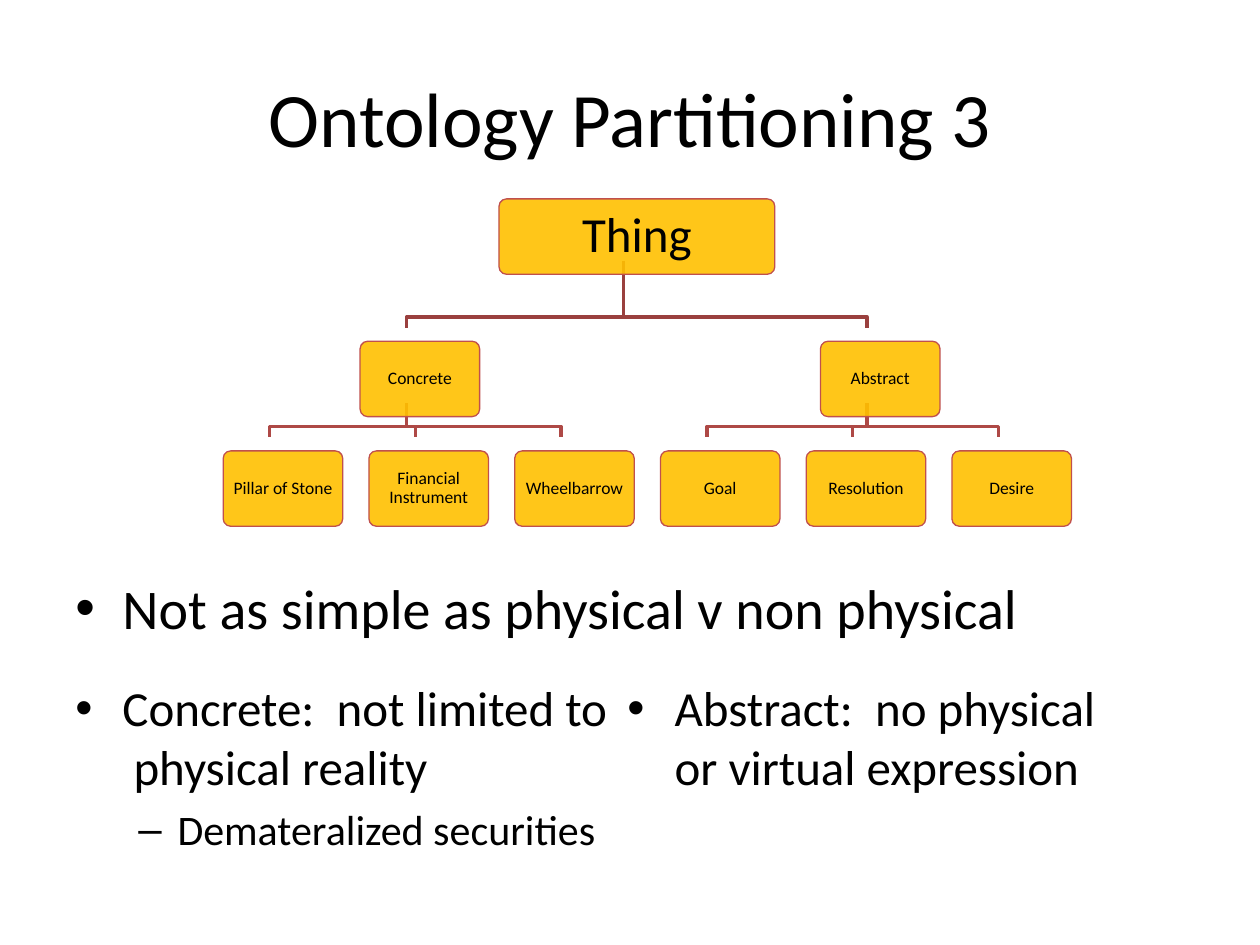
from collections import namedtuple

from lxml.etree import SubElement
from pptx import Presentation
from pptx.dml.color import RGBColor
from pptx.enum.shapes import MSO_SHAPE
from pptx.enum.text import MSO_ANCHOR, PP_ALIGN
from pptx.oxml.ns import qn
from pptx.util import Cm, Pt

Box = namedtuple("Box", "left top width height")
Node = namedtuple("Node", "label box size inset")

FONT = "Calibri"
BLACK = "000000"
AMBER = "FFC000"
RED = "C0504D"
CARD_WIDTH, CARD_HEIGHT = 2.41, 1.52
LINK_OFFSET = 0.27
LINK_BEND = 0.22
BRANCHES = [
    ("Concrete", 2.76, ["Pillar of Stone", "Financial Instrument", "Wheelbarrow"]),
    ("Abstract", 12.04, ["Goal", "Resolution", "Desire"]),
]
BULLETS = [("•", 0.95, 0.95), ("–", 2.06, 0.79)]


def color(value):
    return RGBColor.from_string(value)


def add_span(para, text, size):
    span = para.add_run()
    span.text = text
    span.font.name = FONT
    span.font.size = Pt(size)
    span.font.color.rgb = color(BLACK)


def place(shape, box):
    shape.left, shape.top, shape.width, shape.height = (Cm(value) for value in box)


def add_title(page, box, text):
    title = page.shapes.title
    place(title, box)
    title.text_frame.vertical_anchor = MSO_ANCHOR.MIDDLE
    para = title.text_frame.paragraphs[0]
    para.alignment = PP_ALIGN.CENTER
    add_span(para, text, 44)


def add_card(page, node):
    card = page.shapes.add_shape(
        MSO_SHAPE.ROUNDED_RECTANGLE, *(Cm(value) for value in node.box))
    card.adjustments[0] = 0.1
    card.shadow.inherit = False
    card.fill.solid()
    card.fill.fore_color.rgb = color(AMBER)
    tint = card.fill._xPr.find(qn("a:solidFill"))[0]
    SubElement(tint, qn("a:alpha"), val="90000")
    card.line.color.rgb = color(RED)
    card.line.width = Pt(0.75)
    frame = card.text_frame
    frame.word_wrap = True
    frame.vertical_anchor = MSO_ANCHOR.MIDDLE
    frame.margin_left = frame.margin_right = Cm(node.inset)
    frame.margin_top = frame.margin_bottom = Cm(node.inset)
    para = frame.paragraphs[0]
    para.alignment = PP_ALIGN.CENTER
    para.line_spacing = 0.9
    add_span(para, node.label, node.size)


def add_link(page, parent, child, line_color):
    start_x = parent.left + parent.width / 2 - LINK_OFFSET
    start_y = parent.top + parent.height - LINK_OFFSET
    end_x = child.left + child.width / 2 - LINK_OFFSET
    end_y = child.top - LINK_OFFSET
    bend_y = end_y - LINK_BEND
    builder = page.shapes.build_freeform(Cm(start_x), Cm(start_y))
    corners = [(start_x, bend_y), (end_x, bend_y), (end_x, end_y)]
    builder.add_line_segments([(Cm(x), Cm(y)) for x, y in corners], close=False)
    link = builder.convert_to_shape()
    link.shadow.inherit = False
    link.fill.background()
    link.line.color.rgb = color(line_color)
    link.line.width = Pt(2)


def add_tree(page, box):
    def small_node(label, left, top):
        return Node(label, Box(box.left + left, box.top + top, CARD_WIDTH, CARD_HEIGHT),
                    10, 0.15)

    leaf_top = box.height - CARD_HEIGHT
    pitch = (box.width - CARD_WIDTH) / 5
    root = Node("Thing", Box(box.left + 5.56, box.top, 5.56, CARD_HEIGHT), 28, 0.3)
    nodes = [root]
    for index, (label, left, leaves) in enumerate(BRANCHES):
        branch = small_node(label, left, 2.87)
        nodes.append(branch)
        add_link(page, root.box, branch.box, "9A403E")
        for column, leaf_label in enumerate(leaves, start=index * 3):
            leaf = small_node(leaf_label, column * pitch, leaf_top)
            nodes.append(leaf)
            add_link(page, branch.box, leaf.box, "AE4946")
    for node in nodes:
        add_card(page, node)


def add_bullets(page, box, items):
    frame = page.shapes.add_textbox(*(Cm(value) for value in box)).text_frame
    frame.word_wrap = True
    for index, (level, text, size) in enumerate(items):
        para = frame.add_paragraph() if index else frame.paragraphs[0]
        para.level = level
        para.space_before = Pt(size * 0.2)
        symbol, margin, hang = BULLETS[level]
        properties = para._p.get_or_add_pPr()
        properties.set("marL", str(Cm(margin)))
        properties.set("indent", str(-Cm(hang)))
        SubElement(properties, qn("a:buFont"), typeface="Arial")
        SubElement(properties, qn("a:buChar"), char=symbol)
        add_span(para, text, size)


def main():
    deck = Presentation()
    deck.slide_width, deck.slide_height = Cm(25.4), Cm(19.05)
    page = deck.slides.add_slide(deck.slide_layouts[5])
    add_title(page, Box(1.27, 0.76, 22.86, 3.18), "Ontology Partitioning 3")
    add_tree(page, Box(4.5, 4.01, 17.1, 6.6))
    add_bullets(page, Box(1.27, 13.54, 11.43, 4.24), [
        (0, "Concrete:  not limited to  physical reality", 28),
        (1, "Demateralized securities", 24),
    ])
    add_bullets(page, Box(12.4, 13.54, 11, 4.24), [
        (0, "Abstract:  no physical or virtual expression", 28),
    ])
    add_bullets(page, Box(1.27, 11.43, 22.23, 2.34), [
        (0, "Not as simple as physical v non physical", 32),
    ])
    deck.save("out.pptx")


if __name__ == "__main__":
    main()
